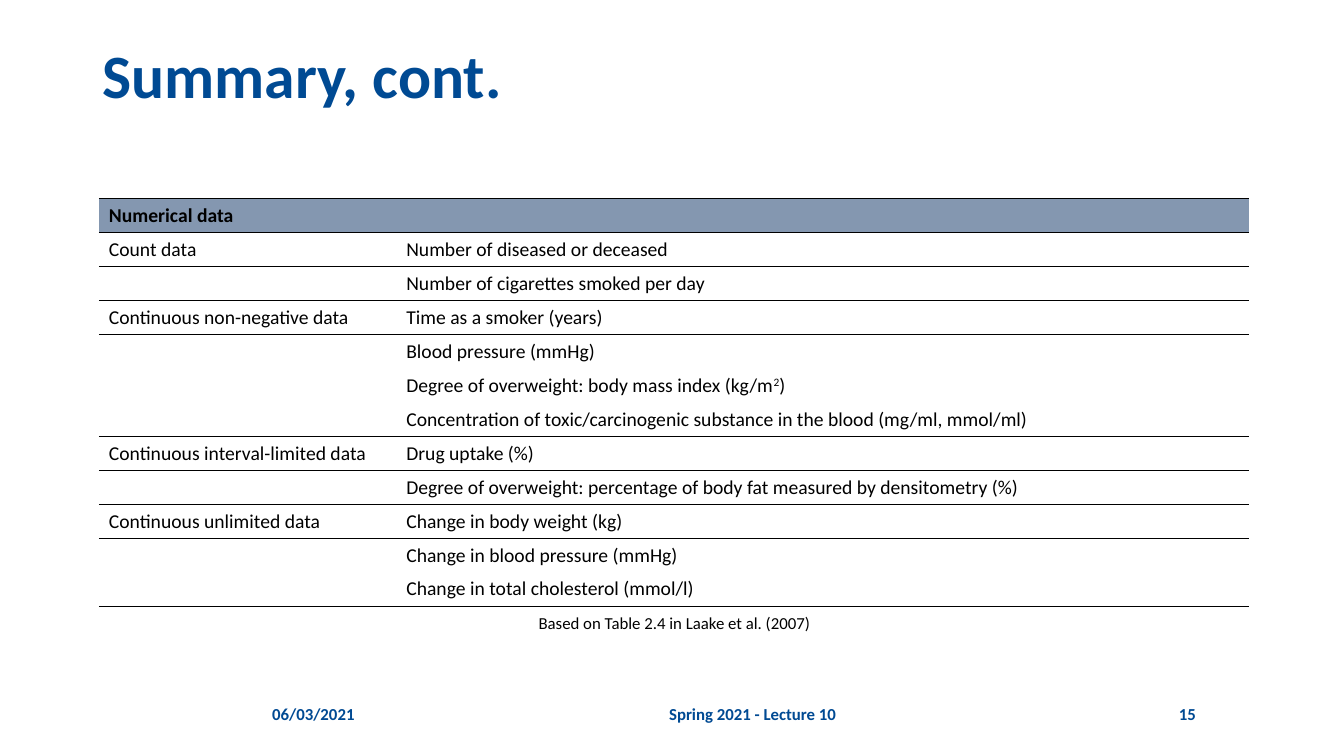
"""Build the numerical data summary slide."""
from lxml import etree
from pptx import Presentation, util as u
from pptx.dml.color import RGBColor
from pptx.enum import text
from pptx.oxml.ns import qn

NAVY = RGBColor(0x00, 0x4A, 0x93)
BLACK = RGBColor(0, 0, 0)
SLATE = RGBColor(0x84, 0x97, 0xB0)
WHITE = RGBColor(255, 255, 255)
FONT = "Calibri"
PLAIN_STYLE = "{2D5ABB26-0587-4C30-8999-92F81FD0307C}"
LEFT, CENTER, RIGHT = text.PP_ALIGN.LEFT, text.PP_ALIGN.CENTER, text.PP_ALIGN.RIGHT
TOP, MIDDLE = text.MSO_ANCHOR.TOP, text.MSO_ANCHOR.MIDDLE

ROWS = [
    ("Numerical data", ""),
    ("Count data", "Number of diseased or deceased"),
    ("", "Number of cigarettes smoked per day"),
    ("Continuous non-negative data", "Time as a smoker (years)"),
    ("", "Blood pressure (mmHg)"),
    ("", "Degree of overweight: body mass index (kg/m^2^)"),
    ("", "Concentration of toxic/carcinogenic substance in the blood (mg/ml, mmol/ml)"),
    ("Continuous interval-limited data", "Drug uptake (%)"),
    ("", "Degree of overweight: percentage of body fat measured by densitometry (%)"),
    ("Continuous unlimited data", "Change in body weight (kg)"),
    ("", "Change in blood pressure (mmHg)"),
    ("", "Change in total cholesterol (mmol/l)"),
]
OPEN_ROWS = {4, 5, 10}
TABLE_AT = (0.98, 1.97)
COL_WIDTHS = (2.95, 8.46)
ROW_HEIGHT = 0.33

TITLE = {"size": u.Pt(44), "bold": True, "name": FONT}
FOOTER = {"size": u.Pt(12), "bold": True, "name": FONT}
CAPTION = {"size": u.Pt(12), "bold": False, "name": FONT}
TEXTS = [
    ("Summary, cont.", (0.92, 0.4, 11.5, 1.45), LEFT, TOP, True, NAVY, TITLE),
    ("06/03/2021", (2.6, 6.88, 1.31, 0.4), LEFT, MIDDLE, True, NAVY, FOOTER),
    ("Spring 2021 - Lecture 10", (4.07, 6.88, 6.79, 0.4), CENTER, MIDDLE, True, NAVY, FOOTER),
    ("15", (11.02, 6.88, 0.94, 0.4), RIGHT, MIDDLE, True, NAVY, FOOTER),
    ("Based on Table 2.4 in Laake et al. (2007)", (4.92, 5.98, 3.54, 0.39),
     CENTER, MIDDLE, False, BLACK, CAPTION),
]


def add_run(p, words, color, formats):
    r = p.add_run()
    r.text = words
    for key, value in formats.items():
        setattr(r.font, key, value)
    r.font.color.rgb = color
    return r


def add_text(s, words, at, align, anchor, wrap, color, formats):
    tf = s.shapes.add_textbox(*map(u.Inches, at)).text_frame
    tf.word_wrap, tf.vertical_anchor = wrap, anchor
    p = tf.paragraphs[0]
    p.alignment = align
    if formats is TITLE:
        p.line_spacing = 0.9
    add_run(p, words, color, formats)


def add_borders(cell, visible):
    tc_pr = cell._tc.get_or_add_tcPr()
    for side in "LRTB":
        ln = etree.SubElement(tc_pr, qn(f"a:ln{side}"), w=str(u.Pt(1)))
        if side in visible:
            fill = etree.SubElement(ln, qn("a:solidFill"))
            etree.SubElement(fill, qn("a:srgbClr"), val=str(BLACK))
        else:
            etree.SubElement(ln, qn("a:noFill"))


def fill_cell(cell, words, row):
    cell.vertical_anchor = MIDDLE
    visible = "" if row in OPEN_ROWS else "B"
    if row - 1 not in OPEN_ROWS:
        visible += "T"
    add_borders(cell, visible)
    cell.fill.solid()
    cell.fill.fore_color.rgb = WHITE if row else SLATE
    p = cell.text_frame.paragraphs[0]
    formats = {"size": u.Pt(14), "bold": row == 0, "name": FONT}
    if not words:
        etree.SubElement(p._p, qn("a:endParaRPr"), sz="1400")
        return
    for i, part in enumerate(words.split("^")):
        r = add_run(p, part, BLACK, formats)
        if i % 2:
            r.font._element.set("baseline", "30000")


def add_summary_table(s):
    size = (sum(COL_WIDTHS), ROW_HEIGHT * len(ROWS))
    frame = s.shapes.add_table(len(ROWS), len(COL_WIDTHS), *map(u.Inches, TABLE_AT + size))
    table = frame.table
    table._tbl.tblPr.find(qn("a:tableStyleId")).text = PLAIN_STYLE
    table.horz_banding = False
    for col, width in zip(table.columns, COL_WIDTHS):
        col.width = u.Inches(width)
    for i, row in enumerate(ROWS):
        table.rows[i].height = u.Inches(ROW_HEIGHT)
        for j, words in enumerate(row):
            fill_cell(table.cell(i, j), words, i)


def main():
    prs = Presentation()
    prs.slide_width, prs.slide_height = u.Inches(13.33), u.Inches(7.5)
    s = prs.slides.add_slide(prs.slide_layouts[6])
    add_summary_table(s)
    for item in TEXTS:
        add_text(s, *item)
    prs.save("out.pptx")


if __name__ == "__main__":
    main()
